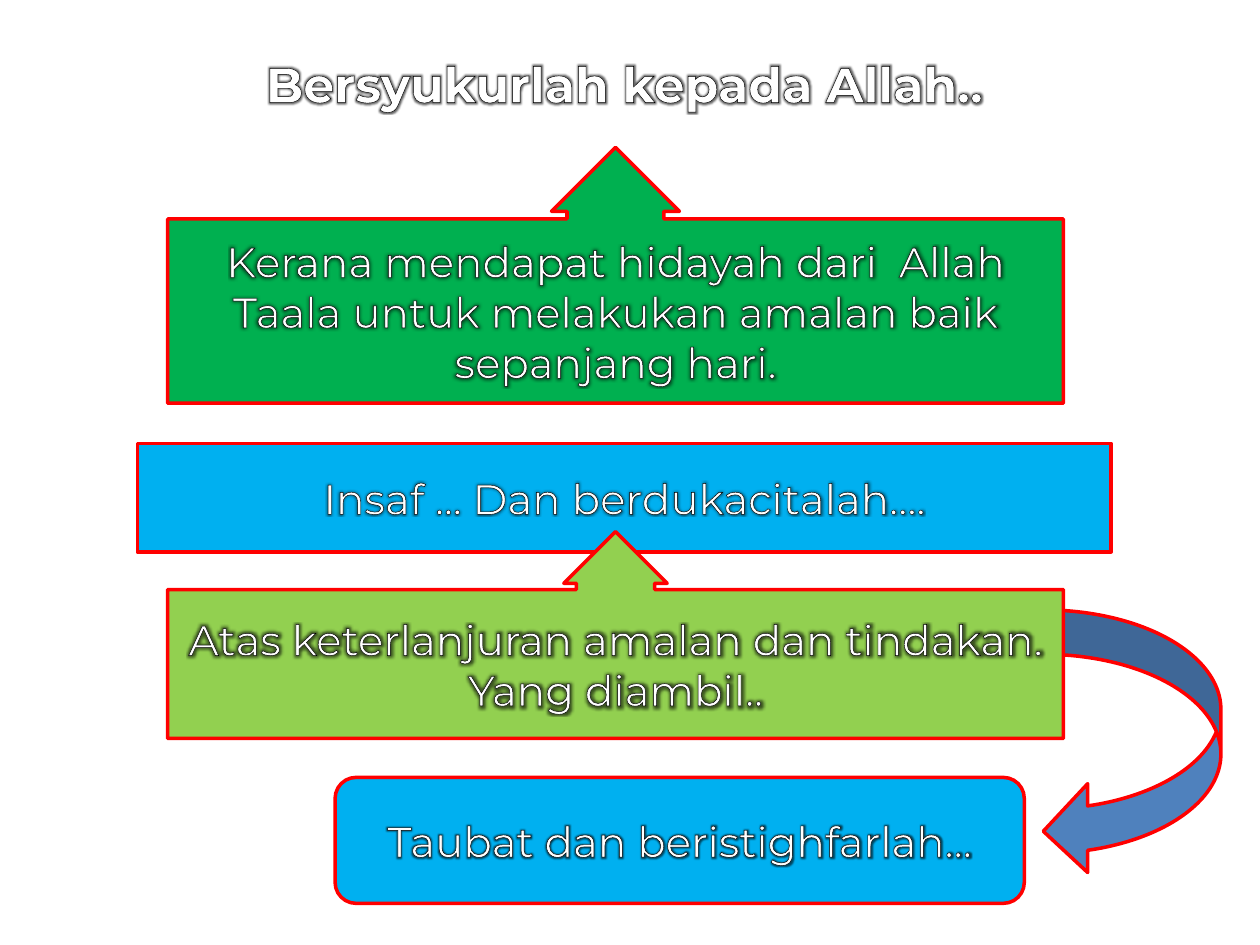
from lxml import etree
from pptx import Presentation
from pptx import util as u
from pptx.dml.color import RGBColor
from pptx.enum import shapes, text
from pptx.oxml import ns

COLOURS = {
    "text": "FFFFFF",
    "outline": "000000",
    "border": "FF0000",
    "gratitude": "00B050",
    "remorse": "00B0F0",
    "misdeed": "92D050",
    "arrow": "4F81BD",
}
FONT = "Montserrat"
CALLOUT = (0.379, 0.25, 0.25, 0.72)
BANNER_LEFT, BANNER_WIDTH, BANNER_HEIGHT = 1.09, 7.73, 0.86
CALLOUT_LEFT, CALLOUT_WIDTH = 1.33, 7.11


def colour(name):
    return RGBColor.from_string(COLOURS[name])


def add_effect(parent, tag, **attributes):
    element = etree.SubElement(parent, ns.qn(tag))
    for name, value in attributes.items():
        element.set(name, str(value))
    return element


def outline_text(span):
    """Give the letters a thin dark edge and a soft dark glow."""
    properties = span.font._element if hasattr(span.font, "_element") else span._r.get_or_add_rPr()
    line = add_effect(properties, "a:ln", w=u.Pt(0.75))
    fill = add_effect(line, "a:solidFill")
    add_effect(fill, "a:srgbClr", val=COLOURS["outline"])
    effects = add_effect(properties, "a:effectLst")
    glow = add_effect(effects, "a:glow", rad=u.Pt(4))
    shade = add_effect(glow, "a:srgbClr", val=COLOURS["outline"])
    add_effect(shade, "a:alpha", val=60000)


def write(shape, words, size=24, bold=False):
    frame = shape.text_frame
    frame.word_wrap = True
    frame.vertical_anchor = text.MSO_ANCHOR.MIDDLE
    para = frame.paragraphs[0]
    para.alignment = text.PP_ALIGN.CENTER
    para.font.name = FONT
    para.font.size = u.Pt(size)
    para.font.bold = bold
    para.font.color.rgb = colour("text")
    span = para.add_run()
    span.text = words
    outline_text(span)


def add_title(page, box, words):
    title = page.shapes.add_textbox(*map(u.Inches, box))
    write(title, words, size=28, bold=True)


def add_block(page, kind, box, fill, words=None, adjustments=()):
    block = page.shapes.add_shape(kind, *map(u.Inches, box))
    block.shadow.inherit = False
    block.fill.solid()
    block.fill.fore_color.rgb = colour(fill)
    block.line.color.rgb = colour("border")
    block.line.width = u.Pt(2)
    for index, value in enumerate(adjustments):
        block.adjustments[index] = value
    if words:
        write(block, words)


def build_gratitude_slide(page):
    kind = shapes.MSO_SHAPE
    add_title(page, (BANNER_LEFT, 0.23, BANNER_WIDTH, BANNER_HEIGHT),
              "Bersyukurlah kepada Allah..")
    add_block(page, kind.UP_ARROW_CALLOUT, (CALLOUT_LEFT, 1.17, CALLOUT_WIDTH, 2.03),
              "gratitude",
              "Kerana mendapat hidayah dari  Allah Taala untuk melakukan "
              "amalan baik sepanjang hari.", CALLOUT)
    add_block(page, kind.RECTANGLE, (BANNER_LEFT, 3.52, BANNER_WIDTH, BANNER_HEIGHT),
              "remorse", "Insaf ... Dan berdukacitalah….")
    add_block(page, kind.ROUNDED_RECTANGLE, (2.66, 6.17, 5.47, 1),
              "remorse", "Taubat dan beristighfarlah…")
    add_block(page, kind.CURVED_LEFT_ARROW, (8.28, 4.84, 1.41, 2.11), "arrow")
    add_block(page, kind.UP_ARROW_CALLOUT, (CALLOUT_LEFT, 4.22, CALLOUT_WIDTH, 1.64),
              "misdeed",
              "Atas keterlanjuran amalan dan tindakan. Yang diambil..", CALLOUT)


def main():
    deck = Presentation()
    deck.slide_width = u.Inches(10)
    deck.slide_height = u.Inches(7.5)
    build_gratitude_slide(deck.slides.add_slide(deck.slide_layouts[6]))
    deck.save("out.pptx")


if __name__ == "__main__":
    main()
